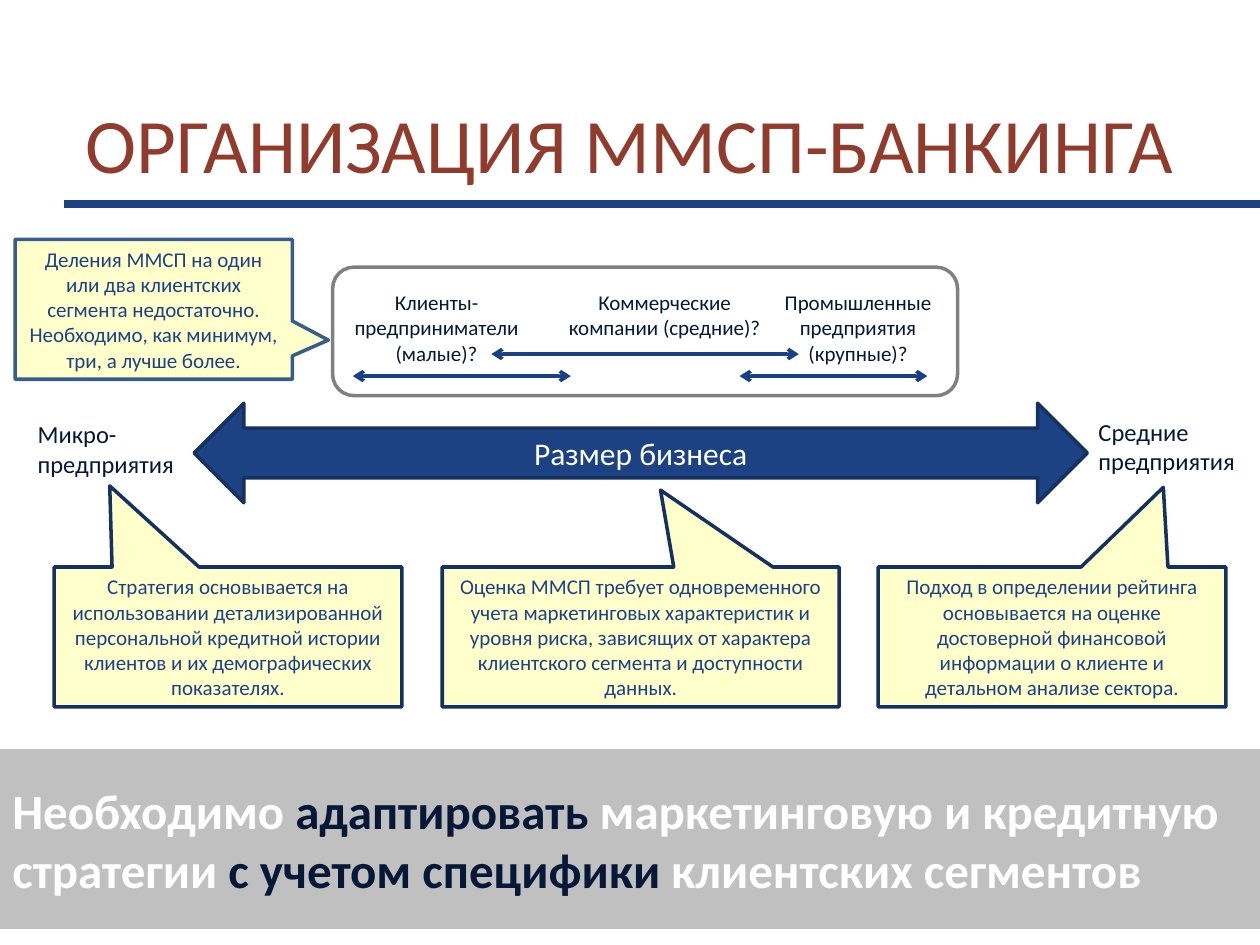
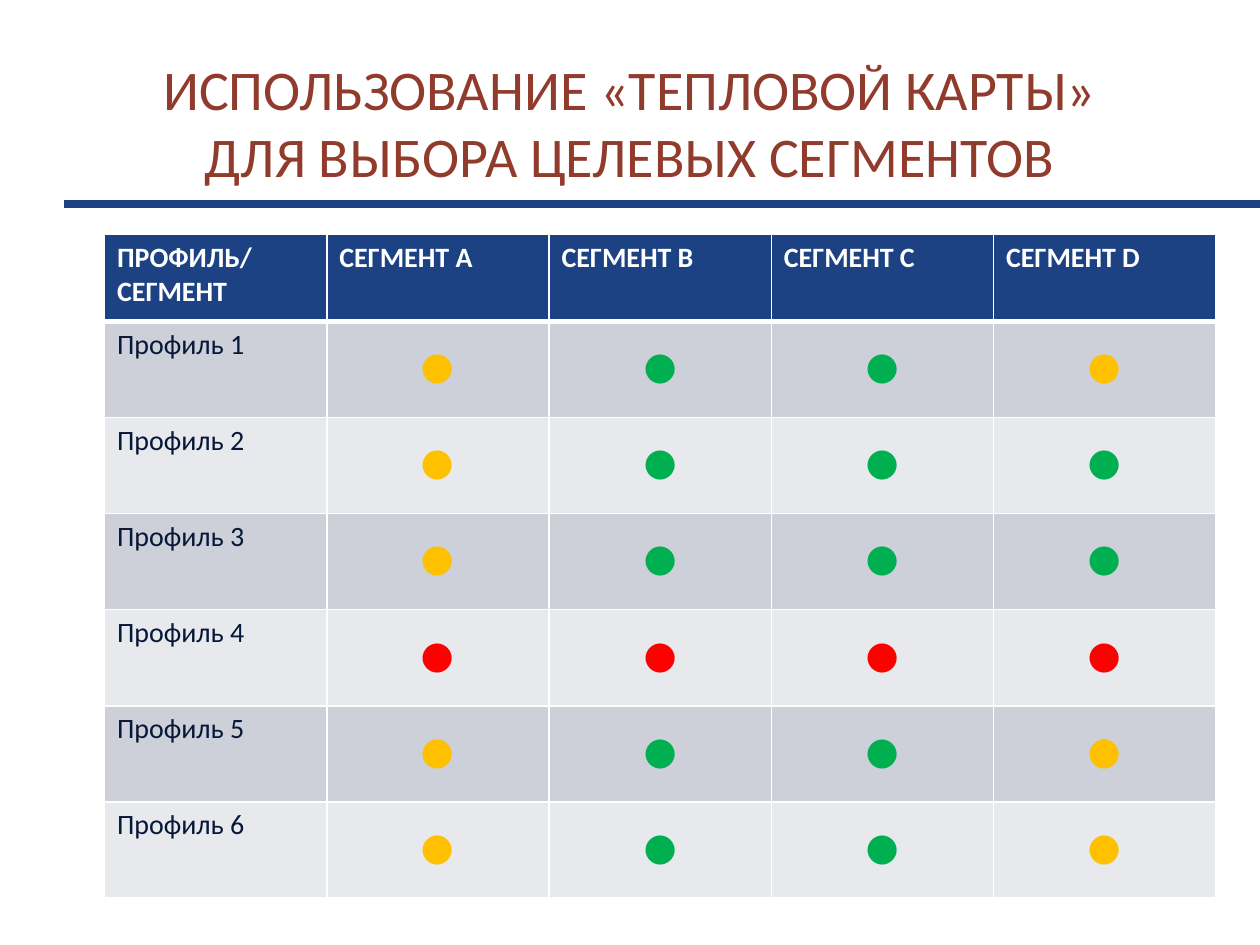
from lxml import etree
from pptx import Presentation
from pptx import util as u
from pptx.dml.color import RGBColor
from pptx.enum import shapes, text
from pptx.oxml import ns

COLS, ROWS = 100, 75  # the slide grid
WIDTH, HEIGHT = u.Inches(10), u.Inches(7.5)
FONT = "Calibri"
BLUE, NAVY, INK, BRICK = "1C4284", "153162", "061837", "913B2D"
CREAM, GREY, WHITE = "FFFFCC", "C0C0C0", "FFFFFF"
GREEN, AMBER, RED = "00B050", "FFC000", "FF0000"
BANDS = "CDCFD9", "E8E9ED"
LEFT, CENTER = text.PP_ALIGN.LEFT, text.PP_ALIGN.CENTER
TOP, MIDDLE, BOTTOM = text.MSO_ANCHOR.TOP, text.MSO_ANCHOR.MIDDLE, text.MSO_ANCHOR.BOTTOM
SHAPE = shapes.MSO_SHAPE


def rgb(hex_color):
    return RGBColor.from_string(hex_color)


def grid(*lengths):
    """Turn alternating columns and rows into slide lengths."""
    units = WIDTH / COLS, HEIGHT / ROWS
    return [round(n * units[i % 2]) for i, n in enumerate(lengths)]


def write(tf, content, size=12, color=INK, bold=False, align=LEFT, anchor=TOP):
    """Write a string, or a list of (string, colour) runs; a newline breaks the line."""
    runs = [(content, color)] if isinstance(content, str) else content
    tf.word_wrap = True
    tf.vertical_anchor = anchor
    p = tf.paragraphs[0]
    p.alignment = align
    for words, run_color in runs:
        for i, line in enumerate(words.split("\n")):
            if i:
                p.add_line_break()
            r = p.add_run()
            r.text = line
            r.font.name, r.font.size, r.font.bold = FONT, u.Pt(size), bold
            r.font.color.rgb = rgb(run_color)


def add_text(s, at, content, **fmt):
    write(s.shapes.add_textbox(*grid(*at)).text_frame, content, **fmt)


def add_box(s, kind, at, fill=None, line=NAVY, weight=2, adj=()):
    sp = s.shapes.add_shape(kind, *grid(*at))
    sp.shadow.inherit = False
    if fill:
        sp.fill.solid()
        sp.fill.fore_color.rgb = rgb(fill)
    else:
        sp.fill.background()
    sp.line.color.rgb = rgb(line)
    sp.line.width = u.Pt(weight)
    for i, value in enumerate(adj):
        sp.adjustments[i] = value
    return sp


def add_callout(s, at, tip, content, line=NAVY):
    sp = add_box(s, SHAPE.RECTANGULAR_CALLOUT, at, CREAM, line, adj=tip)
    write(sp.text_frame, content, color=BLUE, align=CENTER, anchor=MIDDLE)


def add_line(s, start, end, row, color, weight, arrows=False):
    """Draw a level line between two columns."""
    c = s.shapes.add_connector(shapes.MSO_CONNECTOR.STRAIGHT, *grid(start, row, end, row))
    c.line.color.rgb = rgb(color)
    c.line.width = u.Pt(weight)
    if arrows:
        ln = c.line._get_or_add_ln()
        for end_tag in ("a:headEnd", "a:tailEnd"):
            etree.SubElement(ln, ns.qn(end_tag), type="arrow")
    etree.SubElement(c._element.spPr, ns.qn("a:effectLst"))


def add_slide(prs, title, size):
    s = prs.slides.add_slide(prs.slide_layouts[6])
    add_line(s, 5.1, COLS, 16.2, BLUE, 4.5)
    add_text(s, (5, 3, 90, 12.5), title, size=size, color=BRICK, align=CENTER, anchor=BOTTOM)
    return s


def set_borders(cell, top=1, bottom=1):
    tc_pr = cell._tc.get_or_add_tcPr()
    for tag, weight in (("lnL", 1), ("lnR", 1), ("lnT", top), ("lnB", bottom)):
        ln = etree.SubElement(tc_pr, ns.qn("a:" + tag), w=str(u.Pt(weight)))
        fill = etree.SubElement(ln, ns.qn("a:solidFill"))
        etree.SubElement(fill, ns.qn("a:srgbClr"), val=WHITE)


def fill_cell(cell, content, fill, top=1, bottom=1, **fmt):
    set_borders(cell, top, bottom)
    cell.fill.solid()
    cell.fill.fore_color.rgb = rgb(fill)
    write(cell.text_frame, content, **fmt)


def add_heat_map(s, at, header_height, headers, ratings):
    left, top, width, height = at
    table = s.shapes.add_table(len(ratings) + 1, len(headers), *grid(*at)).table
    row_height = (height - header_height) / len(ratings)
    for i, row in enumerate(table.rows):
        row.height = grid(0, row_height if i else header_height)[1]
    for j, header in enumerate(headers):
        fill_cell(table.cell(0, j), header, BLUE, bottom=3, size=16, color=WHITE, bold=True)
    for i, colors in enumerate(ratings, 1):
        look = {"fill": BANDS[(i - 1) % 2], "top": 3 if i == 1 else 1}
        fill_cell(table.cell(i, 0), f"Профиль {i}", size=16, **look)
        for j, color in enumerate(colors, 1):
            fill_cell(table.cell(i, j), "●", size=36, color=color, align=CENTER, **look)


def build_organization(prs):
    s = add_slide(prs, "ОРГАНИЗАЦИЯ ММСП-БАНКИНГА", 44)
    size_arrow = add_box(s, SHAPE.LEFT_RIGHT_ARROW, (15.4, 32, 70.9, 7.9), BLUE)
    write(size_arrow.text_frame, "Размер бизнеса", size=18, color=WHITE,
          align=CENTER, anchor=MIDDLE)
    add_text(s, (86.2, 32.6, 13.4, 5.7), "Средние предприятия", size=14)
    add_text(s, (2, 32.8, 13.4, 5.7), "Микро-предприятия", size=14)

    segments = (
        (26.4, 16.5, "Клиенты-предприниматели (малые)?", 28, 45.3, 29.85),
        (42.9, 19.7, "Коммерческие компании (средние)?", 39, 63.4, 28.1),
        (61, 14.2, "Промышленные предприятия (крупные)?", 58.7, 73.6, 29.85),
    )
    for left, width, label, start, end, row in segments:
        add_text(s, (left, 22.5, width, 7.1), label, align=CENTER)
        add_line(s, start, end, row, "194084", 2, arrows=True)
    add_box(s, SHAPE.ROUNDED_RECTANGLE, (26.4, 21.2, 49.6, 10.2), line="808080")

    add_callout(s, (1.2, 19, 22, 11.1), (0.63, 0.22),
                "Деления ММСП на один или два клиентских сегмента недостаточно. "
                "Необходимо, как минимум, три, а лучше более.", line="385D8A")
    approaches = (
        (4.3, 27.6, (-0.34, -1.08),
         "Стратегия основывается на использовании детализированной персональной "
         "кредитной истории клиентов и их демографических показателях."),
        (35.1, 31.5, (0.05, -1.05),
         "Оценка ММСП требует одновременного учета маркетинговых характеристик и уровня "
         "риска, зависящих от характера клиентского сегмента и доступности данных."),
        (69.7, 27.6, (0.32, -1.07),
         "Подход в определении рейтинга основывается на оценке достоверной финансовой "
         "информации о клиенте и детальном анализе сектора."),
    )
    for left, width, tip, content in approaches:
        add_callout(s, (left, 45, width, 11.1), tip, content)

    conclusion = add_box(s, SHAPE.RECTANGLE, (0, 59.5, COLS, 14.2), GREY, GREY, 0.75)
    write(conclusion.text_frame, [
        ("Необходимо ", WHITE), ("адаптировать", INK),
        (" маркетинговую и кредитную стратегии ", WHITE),
        ("с учетом специфики ", INK), ("клиентских сегментов", WHITE),
    ], size=28, bold=True, anchor=MIDDLE)


def build_heat_map(prs):
    s = add_slide(prs, "ИСПОЛЬЗОВАНИЕ «ТЕПЛОВОЙ КАРТЫ»\nДЛЯ ВЫБОРА ЦЕЛЕВЫХ СЕГМЕНТОВ", 32)
    headers = ["ПРОФИЛЬ/ СЕГМЕНТ"] + [f"СЕГМЕНТ {letter}" for letter in "ABCD"]
    mixed = (AMBER, GREEN, GREEN, AMBER)
    strong = (AMBER, GREEN, GREEN, GREEN)
    weak = (RED,) * 4
    add_heat_map(s, (8.3, 18.6, 88.2, 52.7), 6.9, headers,
                 (mixed, strong, strong, weak, mixed, mixed))


def main():
    prs = Presentation()
    prs.slide_width, prs.slide_height = WIDTH, HEIGHT
    build_organization(prs)
    build_heat_map(prs)
    prs.save("out.pptx")


if __name__ == "__main__":
    main()
